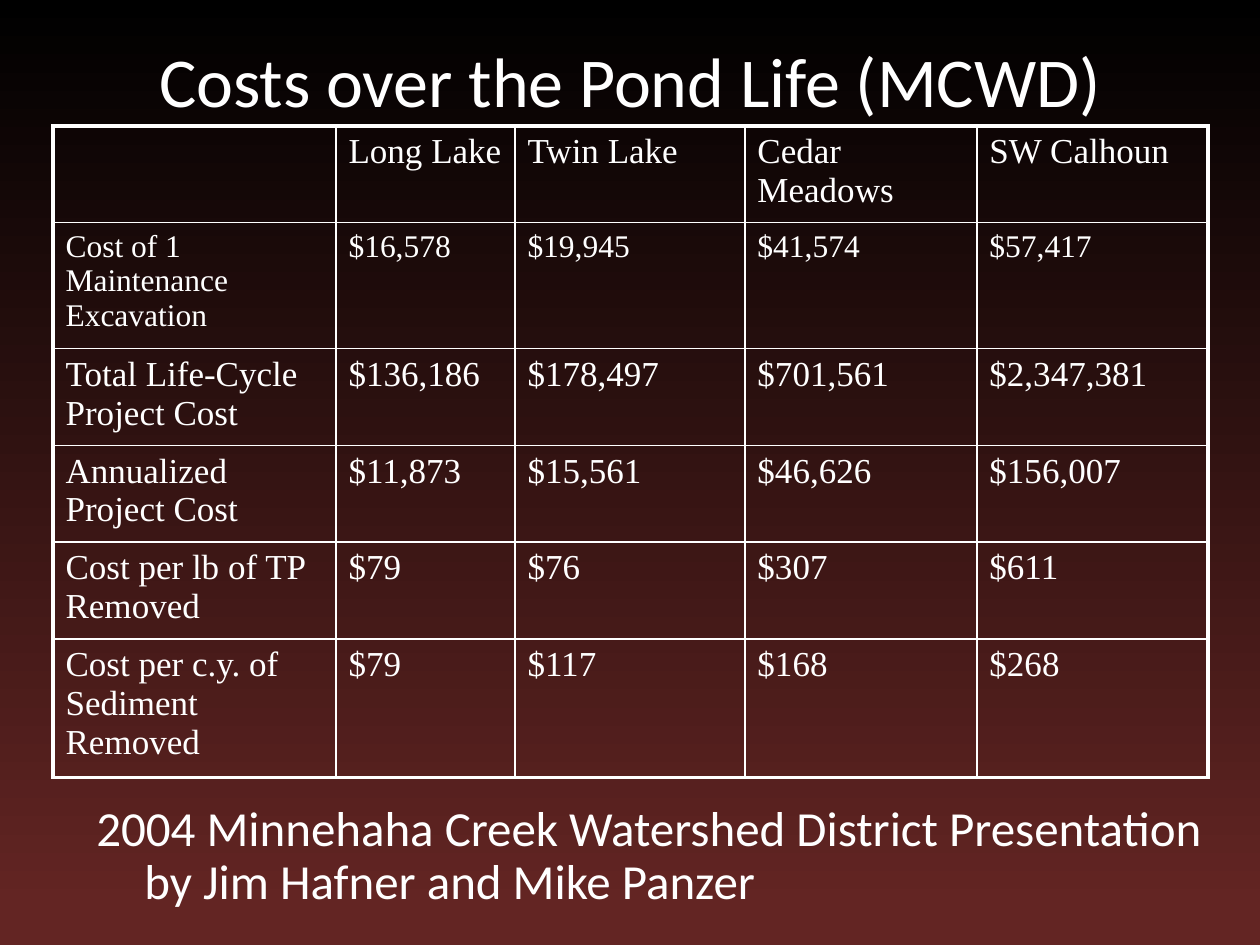
from dataclasses import dataclass

from lxml import etree
from pptx import Presentation
from pptx.dml.color import RGBColor
from pptx.enum.text import MSO_ANCHOR, PP_ALIGN
from pptx.oxml.ns import qn
from pptx.util import Emu, Pt

EMU_PER_PX = 914400 // 126
MIDDLE, TOP = MSO_ANCHOR.MIDDLE, MSO_ANCHOR.TOP
CENTER, LEFT = PP_ALIGN.CENTER, PP_ALIGN.LEFT
BLANK_LAYOUT = 6
WHITE, BLACK, MAROON = "FFFFFF", "000000", "632523"
HEADING_FONT, TABLE_FONT = "Calibri", "Times New Roman"
INNER_LINE, OUTER_LINE = 1, 2.25

COLUMN_WIDTHS = (283, 179, 230, 232, 231)
ROW_HEIGHTS = (90, 88, 88, 90, 90, 90)
TABLE_LEFT, TABLE_TOP = 53, 126


@dataclass(frozen=True)
class TextBlock:
    text: str
    left: int
    top: int
    width: int
    height: int
    size: int
    align: PP_ALIGN = LEFT
    anchor: MSO_ANCHOR = TOP
    hanging: int = 0
    line_spacing: float = 1.0


@dataclass(frozen=True)
class CostRow:
    label: str
    values: tuple[str, ...]
    size: int = 20


TEXT_BLOCKS = (
    TextBlock("Costs over the Pond Life (MCWD)", 63, 0, 1134, 158, 40, CENTER, MIDDLE),
    TextBlock(
        "2004 Minnehaha Creek Watershed District Presentation by Jim Hafner and Mike Panzer",
        84, 798, 1134, 126, 28, hanging=48, line_spacing=0.9,
    ),
)
COST_ROWS = (
    CostRow("", ("Long Lake", "Twin Lake", "Cedar Meadows", "SW Calhoun")),
    CostRow("Cost of 1 Maintenance Excavation", ("$16,578", "$19,945", "$41,574", "$57,417"), 18),
    CostRow("Total Life-Cycle Project Cost", ("$136,186", "$178,497", "$701,561", "$2,347,381")),
    CostRow("Annualized Project Cost", ("$11,873", "$15,561", "$46,626", "$156,007")),
    CostRow("Cost per lb of TP Removed", ("$79", "$76", "$307", "$611")),
    CostRow("Cost per c.y. of Sediment Removed", ("$79", "$117", "$168", "$268")),
)


def px(length: int) -> Emu:
    """Turn pixels into EMU."""
    return Emu(length * EMU_PER_PX)


def color(value: str) -> RGBColor:
    """Turn a hex string into a colour."""
    return RGBColor.from_string(value)


def format_paragraph(paragraph, font_name: str, size: int) -> None:
    """Set the font of a paragraph and its space before of 20 percent."""
    for font in (paragraph.font, *(run.font for run in paragraph.runs)):
        font.name = font_name
        font.size = Pt(size)
        font.bold = False
        font.color.rgb = color(WHITE)
    properties = paragraph._p.get_or_add_pPr()
    space = etree.Element(qn("a:spcBef"))
    etree.SubElement(space, qn("a:spcPct"), val="20000")
    line_spacing = properties.find(qn("a:lnSpc"))
    properties.insert(0 if line_spacing is None else 1, space)


def set_background(slide) -> None:
    """Fill the slide with a vertical gradient."""
    fill = slide.background.fill
    fill.gradient()
    fill.gradient_angle = 270
    for stop, position, value in zip(fill.gradient_stops, (0, 0.96), (BLACK, MAROON)):
        stop.position = position
        stop.color.rgb = color(value)


def add_text(slide, block: TextBlock) -> None:
    """Add one wrapped text box."""
    shape = slide.shapes.add_textbox(
        px(block.left), px(block.top), px(block.width), px(block.height)
    )
    text_frame = shape.text_frame
    text_frame.word_wrap = True
    text_frame.vertical_anchor = block.anchor
    text_frame.text = block.text
    paragraph = text_frame.paragraphs[0]
    paragraph.alignment = block.align
    paragraph.line_spacing = block.line_spacing
    format_paragraph(paragraph, HEADING_FONT, block.size)
    properties = paragraph._p.get_or_add_pPr()
    properties.set("marL", str(px(block.hanging)))
    properties.set("indent", str(-px(block.hanging)))


def add_border(cell, side: str, outer: bool) -> None:
    """Draw one white border line of a cell."""
    width = Pt(OUTER_LINE if outer else INNER_LINE)
    line = etree.SubElement(cell._tc.get_or_add_tcPr(), qn(f"a:ln{side}"), w=str(width))
    fill = etree.SubElement(line, qn("a:solidFill"))
    etree.SubElement(fill, qn("a:srgbClr"), val=WHITE)


def add_cost_table(slide, rows: tuple[CostRow, ...]) -> None:
    """Add the cost table with a heavy frame and thin inner lines."""
    last_row, last_column = len(rows) - 1, len(COLUMN_WIDTHS) - 1
    table = slide.shapes.add_table(
        len(rows), len(COLUMN_WIDTHS), px(TABLE_LEFT), px(TABLE_TOP),
        px(sum(COLUMN_WIDTHS)), px(sum(ROW_HEIGHTS)),
    ).table
    table.first_row = table.horz_banding = False
    for column, width in zip(table.columns, COLUMN_WIDTHS):
        column.width = px(width)
    for row_index, row in enumerate(rows):
        table.rows[row_index].height = px(ROW_HEIGHTS[row_index])
        for column_index, text in enumerate((row.label, *row.values)):
            cell = table.cell(row_index, column_index)
            cell.text_frame.text = text
            format_paragraph(cell.text_frame.paragraphs[0], TABLE_FONT, row.size)
            add_border(cell, "L", column_index == 0)
            add_border(cell, "R", column_index == last_column)
            add_border(cell, "T", row_index == 0)
            add_border(cell, "B", row_index == last_row)
            cell.fill.background()


def main() -> None:
    """Build and save the slide."""
    presentation = Presentation()
    presentation.slide_width, presentation.slide_height = px(1260), px(945)
    slide = presentation.slides.add_slide(presentation.slide_layouts[BLANK_LAYOUT])
    set_background(slide)
    for block in TEXT_BLOCKS:
        add_text(slide, block)
    add_cost_table(slide, COST_ROWS)
    presentation.save("out.pptx")


if __name__ == "__main__":
    main()
